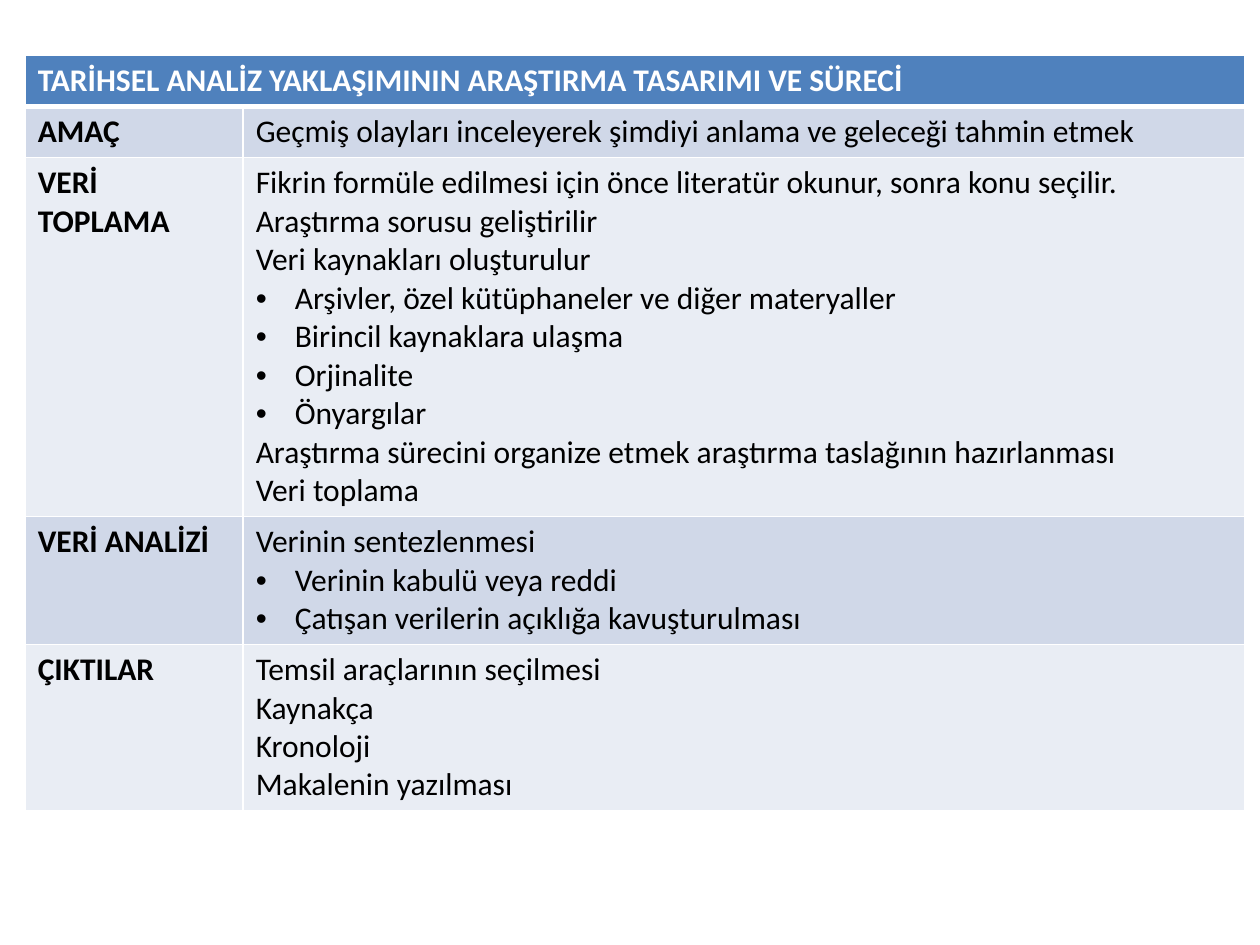
from pptx import Presentation
from pptx.dml.color import RGBColor
from pptx.oxml.ns import qn
from pptx.util import Inches, Pt
from lxml.etree import SubElement

TITLE = "TARİHSEL ANALİZ YAKLAŞIMININ ARAŞTIRMA TASARIMI VE SÜRECİ"
# A nested list holds bulleted lines.
STAGES = [
    ("AMAÇ", ["Geçmiş olayları inceleyerek şimdiyi anlama ve geleceği tahmin etmek"]),
    ("VERİ TOPLAMA", [
        "Fikrin formüle edilmesi için önce literatür okunur, sonra konu seçilir.",
        "Araştırma sorusu geliştirilir",
        "Veri kaynakları oluşturulur",
        ["Arşivler, özel kütüphaneler ve diğer materyaller",
         "Birincil kaynaklara ulaşma",
         "Orjinalite",
         "Önyargılar"],
        "Araştırma sürecini organize etmek araştırma taslağının hazırlanması",
        "Veri toplama",
    ]),
    ("VERİ ANALİZİ", [
        "Verinin sentezlenmesi",
        ["Verinin kabulü veya reddi",
         "Çatışan verilerin açıklığa kavuşturulması"],
    ]),
    ("ÇIKTILAR", [
        "Temsil araçlarının seçilmesi",
        "Kaynakça",
        "Kronoloji",
        "Makalenin yazılması",
    ]),
]

THEME = dict(font="Calibri", size=18, head="4F81BD", bands=("D0D8E8", "E9EDF4"),
             light="FFFFFF", dark="000000", rule=1, thick=3)
LEFT, TOP = 0.2, 0.44
COLS = (1.73, 7.95)
LINE, PAD, INDENT = 0.305, 0.1, 0.31


def flatten(items):
    """Return (text, bulleted) pairs in reading order."""
    lines = []
    for item in items:
        if isinstance(item, list):
            lines += [(text, True) for text in item]
        else:
            lines.append((item, False))
    return lines


def add_bullet(para):
    props = para._p.get_or_add_pPr()
    props.set("marL", str(Inches(INDENT)))
    props.set("indent", str(-Inches(INDENT)))
    SubElement(props, qn("a:buFont"), typeface="Arial")
    SubElement(props, qn("a:buChar"), char="•")


def set_borders(cell, top, bottom):
    props = cell._tc.get_or_add_tcPr()
    sides = dict(L=THEME["rule"], R=THEME["rule"], T=top, B=bottom)
    for side, width in sides.items():
        line = SubElement(props, qn("a:ln" + side), w=str(Pt(width)))
        fill = SubElement(line, qn("a:solidFill"))
        SubElement(fill, qn("a:srgbClr"), val=THEME["light"])


def style_cell(cell, fill, top=THEME["rule"], bottom=THEME["rule"]):
    set_borders(cell, top, bottom)
    cell.fill.solid()
    cell.fill.fore_color.rgb = RGBColor.from_string(fill)


def write(cell, lines, color, bold):
    frame = cell.text_frame
    for i, (text, bulleted) in enumerate(lines):
        para = frame.add_paragraph() if i else frame.paragraphs[0]
        if bulleted:
            add_bullet(para)
        run = para.add_run()
        run.text = text
        font = run.font
        font.name, font.size, font.bold = THEME["font"], Pt(THEME["size"]), bold
        font.color.rgb = RGBColor.from_string(color)


def main():
    deck = Presentation()
    deck.slide_width, deck.slide_height = Inches(10), Inches(7.5)
    slide = deck.slides.add_slide(deck.slide_layouts[6])

    bodies = [flatten(items) for _, items in STAGES]
    heights = [PAD + LINE * count for count in [1] + [len(b) for b in bodies]]
    table = slide.shapes.add_table(
        len(heights), len(COLS), Inches(LEFT), Inches(TOP),
        Inches(sum(COLS)), Inches(sum(heights))).table
    for col, width in zip(table.columns, COLS):
        col.width = Inches(width)
    for row, height in zip(table.rows, heights):
        row.height = Inches(height)

    head = table.cell(0, 0)
    head.merge(table.cell(0, 1))
    for cell in table.rows[0].cells:
        style_cell(cell, THEME["head"], bottom=THEME["thick"])
    write(head, [(TITLE, False)], THEME["light"], True)

    for i, ((name, _), body) in enumerate(zip(STAGES, bodies)):
        label, detail = table.rows[i + 1].cells
        top = THEME["rule"] if i else THEME["thick"]
        for cell in (label, detail):
            style_cell(cell, THEME["bands"][i % 2], top=top)
        write(label, [(name, False)], THEME["dark"], True)
        write(detail, body, THEME["dark"], False)

    deck.save("out.pptx")


if __name__ == "__main__":
    main()
